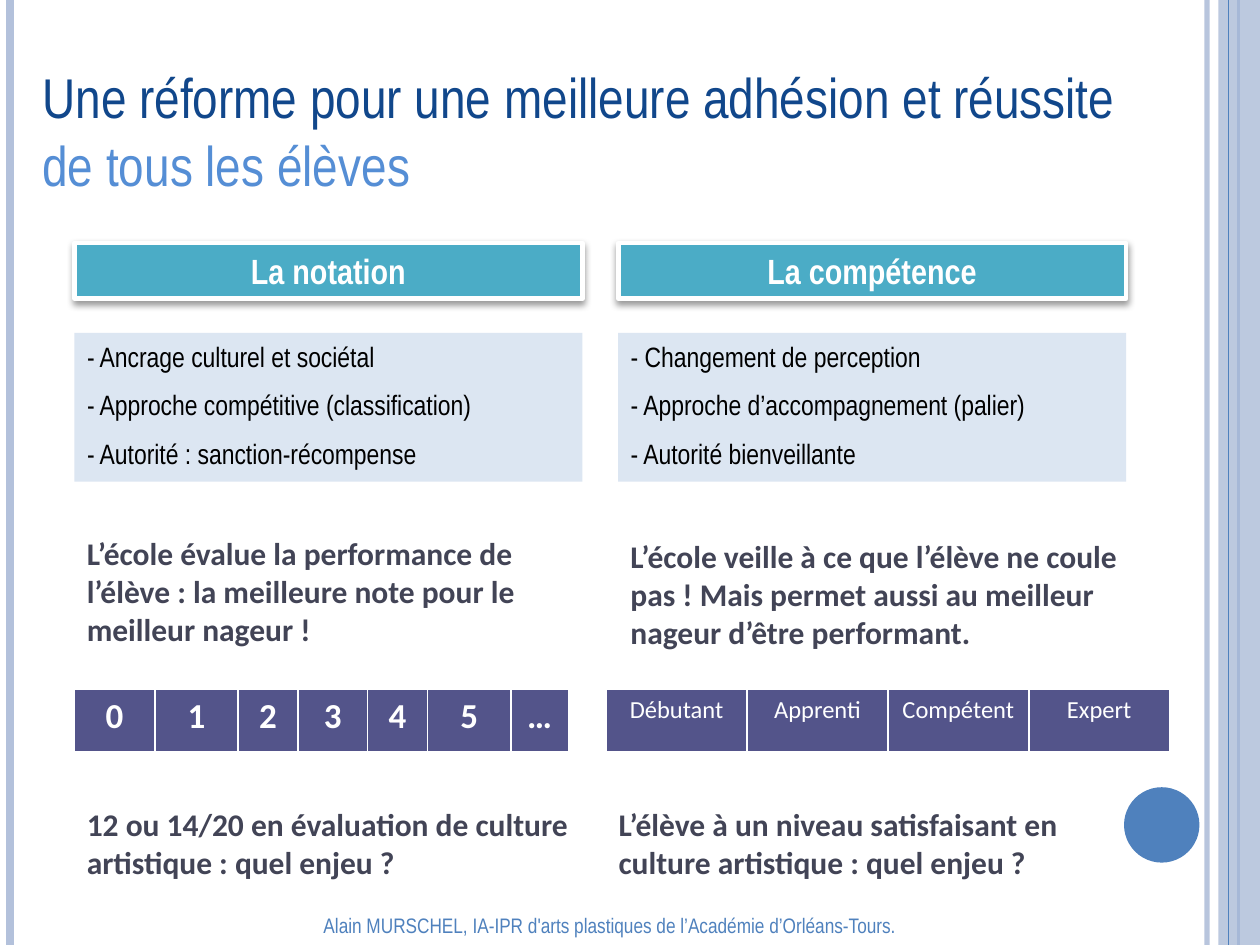
from lxml import etree
from pptx import Presentation, util as u
from pptx.dml.color import RGBColor
from pptx.enum import shapes, text
from pptx.oxml import parse_xml
from pptx.oxml.ns import nsdecls, qn

NARROW, PLAIN = "Arial Narrow", "Calibri"
ACCENT, PALE, TEXT, VIOLET = "4F81BD", "B3C1DB", "424456", "53548A"


def color(hex_code):
    """Return the colour for a hex string."""
    return RGBColor.from_string(hex_code)


def place(shape, left, top, width, height):
    """Move and size a shape, in centimetres."""
    shape.left, shape.top = u.Cm(left), u.Cm(top)
    shape.width, shape.height = u.Cm(width), u.Cm(height)


def paint(shape, fill):
    """Give a shape a plain fill."""
    shape.fill.solid()
    shape.fill.fore_color.rgb = color(fill)


def set_alpha(element, percent):
    """Make the first solid colour inside an element translucent."""
    etree.SubElement(next(element.iter(qn("a:srgbClr"))), qn("a:alpha")).set("val", str(percent * 1000))


def write(frame, content, font, size, fill, bold=False, align=text.PP_ALIGN.LEFT,
          anchor=text.MSO_ANCHOR.TOP, gap=0):
    """Fill a text frame and format every paragraph alike."""
    frame.text = content
    frame.word_wrap = True
    frame.auto_size = text.MSO_AUTO_SIZE.NONE
    frame.vertical_anchor = anchor
    for index, paragraph in enumerate(frame.paragraphs):
        paragraph.alignment = align
        paragraph.space_before = u.Pt(gap if index else 0)
        for run in paragraph.runs:
            run.font.name, run.font.size, run.font.bold = font, u.Pt(size), bold
            run.font.color.rgb = color(fill)


def add_label(slide, box, content, *style, **options):
    """Add a text box."""
    label = slide.shapes.add_textbox(*(u.Cm(value) for value in box))
    write(label.text_frame, content, *style, **options)


def add_rule(slide, x, height, fill, weight):
    """Add a vertical rule."""
    rule = slide.shapes.add_connector(shapes.MSO_CONNECTOR.STRAIGHT, u.Cm(x), 0, u.Cm(x), u.Cm(height))
    rule.line.color.rgb = color(fill)
    rule.line.width = u.Pt(weight)
    etree.SubElement(rule._element.spPr, qn("a:effectLst"))
    return rule


def add_frame(slide, width, height):
    """Draw the side rules, the right band and the disc."""
    set_alpha(add_rule(slide, width - 1.07, height, PALE, 3)._element, 93)
    add_rule(slide, 0.2, height, PALE, 4.5)
    add_rule(slide, width - 0.43, height, ACCENT, 1.5)
    for kind, box, fill, alpha in (
        (shapes.MSO_SHAPE.RECTANGLE, (width - 0.84, 0, 0.84, height), PALE, 87),
        (shapes.MSO_SHAPE.OVAL, (width - 2.74, height - 3.18, 1.52, 1.52), ACCENT, 100),
    ):
        shape = slide.shapes.add_shape(kind, *(u.Cm(value) for value in box))
        shape.shadow.inherit = False
        paint(shape, fill)
        shape.line.fill.background()
        set_alpha(shape._element, alpha)
    add_rule(slide, width - 0.63, height, ACCENT, 0.75)


def add_title(title, box):
    """Place the two-coloured title."""
    place(title, *box)
    write(title.text_frame, "Une réforme pour une meilleure adhésion et réussite\nde tous les élèves",
          NARROW, 32, "11478B")
    title.text_frame.paragraphs[1].runs[0].font.color.rgb = color("558ED5")


def add_heading(heading, box, content):
    """Place a column heading with a white edge and a soft shadow."""
    place(heading, *box)
    paint(heading, "4BACC6")
    heading.line.color.rgb = color("FFFFFF")
    heading.line.width = u.Pt(2.75)
    heading._element.spPr.append(parse_xml(
        f'<a:effectLst {nsdecls("a")}><a:outerShdw blurRad="50800" dist="25400" dir="5400000" '
        'rotWithShape="0"><a:srgbClr val="000000"><a:alpha val="40000"/></a:srgbClr>'
        '</a:outerShdw></a:effectLst>'))
    write(heading.text_frame, content, NARROW, 20, "FFFFFF", True, text.PP_ALIGN.CENTER)


def add_list(body, box, items):
    """Place a list on a pale panel."""
    place(body, *box)
    paint(body, "DCE6F2")
    write(body.text_frame, "\n".join(items), NARROW, 16, "000000", gap=8.7)
    for paragraph in body.text_frame.paragraphs:
        properties = paragraph._p.get_or_add_pPr()
        properties.set("marL", "0")
        properties.set("indent", "0")
        etree.SubElement(properties, qn("a:buNone"))


def add_scale(slide, left, top, widths, levels, size, bold):
    """Add a one-row table of levels with white borders."""
    box = (left, top, sum(widths), 1.3)
    frame = slide.shapes.add_table(1, len(levels), *(u.Cm(value) for value in box))
    table = frame.table
    for column, width in zip(table.columns, widths):
        column.width = u.Cm(width)
    for cell, level in zip(table.rows[0].cells, levels):
        write(cell.text_frame, level, PLAIN, size, "FFFFFF", bold, text.PP_ALIGN.CENTER)
        properties = cell._tc.get_or_add_tcPr()
        for side, weight in (("L", 1), ("R", 1), ("T", 1), ("B", 3)):
            properties.append(parse_xml(
                f'<a:ln{side} {nsdecls("a")} w="{weight * 12700}"><a:solidFill>'
                f'<a:srgbClr val="FFFFFF"/></a:solidFill></a:ln{side}>'))
        paint(cell, VIOLET)


def add_column(slide, placeholders, left, top, width, content):
    """Build one side of the comparison downwards from its top left corner."""
    heading, body = placeholders
    add_heading(heading, (left, top, width, 1.12), content["heading"])
    add_list(body, (left, top + 1.81, width, 3), content["items"])
    statement_top, statement_width = content["statement_box"]
    add_label(slide, (left, top + statement_top, statement_width, 2.57),
              content["statement"], PLAIN, 18, TEXT, True)
    lower_left = left - content["outdent"]
    add_scale(slide, lower_left, top + 8.99, content["widths"], content["levels"], *content["scale_style"])
    add_label(slide, (lower_left, top + 11.2, content["question_width"], 1.8),
              content["question"], PLAIN, 18, TEXT, True)


MARKS = dict(
    heading="La notation",
    items=["- Ancrage culturel et sociétal", "- Approche compétitive (classification)",
           "- Autorité : sanction-récompense"],
    statement="L’école évalue la performance de l’élève : la meilleure note pour le meilleur nageur !",
    statement_box=(5.74, 10.24), outdent=0,
    widths=[1.62, 1.68, 1.21, 1.4, 1.21, 1.68, 1.16], levels="012345…", scale_style=(20, True),
    question="12 ou 14/20 en évaluation de culture artistique : quel enjeu ?", question_width=10.24)
SKILLS = dict(
    heading="La compétence",
    items=["- Changement de perception", "- Approche d’accompagnement (palier)",
           "- Autorité bienveillante"],
    statement="L’école veille à ce que l’élève ne coule pas ! Mais permet aussi au meilleur nageur "
              "d’être performant.",
    statement_box=(5.8, 11.1), outdent=0.24,
    widths=[2.84] * 4, levels=["Débutant", "Apprenti", "Compétent", "Expert"], scale_style=(14, False),
    question="L’élève à un niveau satisfaisant en culture artistique : quel enjeu ?", question_width=10.77)


def main():
    """Build and save the slide."""
    width, height = 25.4, 19.05
    presentation = Presentation()
    presentation.slide_width, presentation.slide_height = u.Cm(width), u.Cm(height)
    slide = presentation.slides.add_slide(presentation.slide_layouts[4])
    title, *bodies = slide.placeholders
    add_frame(slide, width, height)
    add_title(title, (0.6, 1.14, 22.68, 3))
    for index, content in enumerate((MARKS, SKILLS)):
        add_column(slide, bodies[2 * index:2 * index + 2], 1.5 + 10.96 * index, 4.9, 10.24, content)
    add_label(slide, (0, height - 0.81, width - 0.81, 0.81),
              "Alain MURSCHEL, IA-IPR d'arts plastiques de l’Académie d’Orléans-Tours.",
              NARROW, 12, ACCENT, align=text.PP_ALIGN.CENTER, anchor=text.MSO_ANCHOR.MIDDLE)
    presentation.save("out.pptx")


if __name__ == "__main__":
    main()
